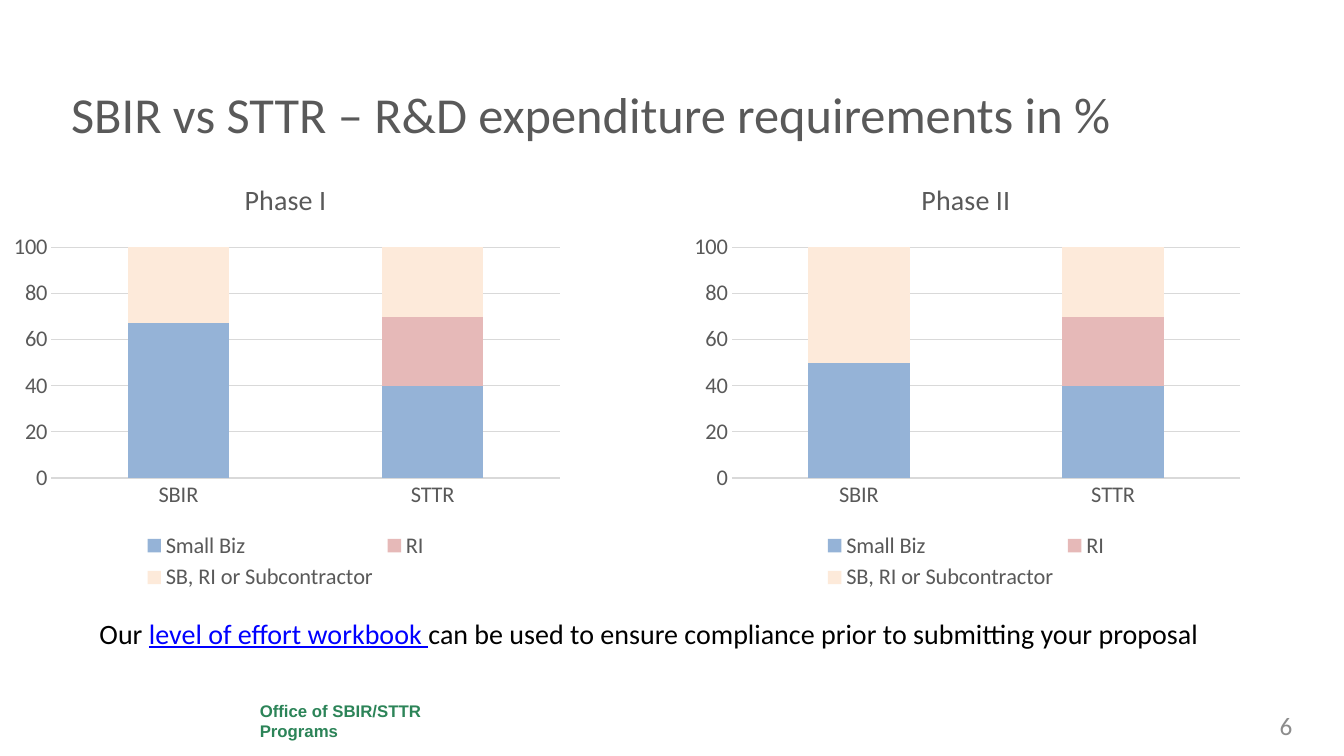
from dataclasses import dataclass

from lxml import etree
from pptx import Presentation
from pptx.chart.data import CategoryChartData
from pptx.dml.color import RGBColor
from pptx.enum.chart import XL_CHART_TYPE, XL_LEGEND_POSITION, XL_TICK_MARK
from pptx.enum.shapes import MSO_SHAPE
from pptx.enum.text import MSO_ANCHOR, PP_ALIGN
from pptx.oxml.ns import qn
from pptx.util import Pt

RECTANGLE = MSO_SHAPE.RECTANGLE
STACKED = XL_CHART_TYPE.COLUMN_STACKED
LEGEND_BOTTOM = XL_LEGEND_POSITION.BOTTOM
NO_TICK = XL_TICK_MARK.NONE
TOP, MIDDLE = MSO_ANCHOR.TOP, MSO_ANCHOR.MIDDLE
LEFT, CENTER = PP_ALIGN.LEFT, PP_ALIGN.CENTER


@dataclass(frozen=True)
class Theme:
    body_font: str = "Calibri"
    footer_font: str = "Arial"
    white: str = "FFFFFF"
    black: str = "000000"
    gray: str = "595959"
    light_gray: str = "8C8C8C"
    grid: str = "D9D9D9"
    green: str = "2C8458"
    link: str = "0000FF"
    series: tuple = ("95B3D7", "E6B9B8", "FDEADA")
    title_size: int = 36
    body_size: int = 20
    number_size: int = 18
    axis_size: int = 16
    footer_size: int = 12


class SlideBuilder:
    def __init__(self, page, theme):
        self.page = page
        self.theme = theme

    def style(self, font, size, color, name=None, bold=False):
        font.name = name or self.theme.body_font
        font.size = Pt(size)
        font.bold = bold
        font.color.rgb = RGBColor.from_string(color)

    def text(self, area, spans, size, anchor=TOP, align=LEFT, wrap=True):
        """Add one line of (wording, color, underlined) spans."""
        box = self.page.shapes.add_textbox(*map(Pt, area))
        frame = box.text_frame
        frame.word_wrap = wrap
        frame.vertical_anchor = anchor
        para = frame.paragraphs[0]
        para.alignment = align
        for wording, color, underlined in spans:
            span = para.add_run()
            span.text = wording
            self.style(span.font, size, color)
            span.font.underline = underlined

    def footer(self, area, wording):
        box = self.page.shapes.add_shape(RECTANGLE, *map(Pt, area))
        box.shadow.inherit = False
        box.fill.solid()
        box.fill.fore_color.rgb = RGBColor.from_string(self.theme.white)
        box.line.fill.background()
        box.text_frame.text = wording
        box.text_frame.vertical_anchor = MIDDLE
        para = box.text_frame.paragraphs[0]
        para.alignment = LEFT
        self.style(para.runs[0].font, self.theme.footer_size, self.theme.green,
                   self.theme.footer_font, bold=True)

    def stacked_chart(self, area, title, categories, series):
        theme = self.theme
        data = CategoryChartData()
        data.categories = categories
        for name, values in series.items():
            data.add_series(name, values)
        chart = self.page.shapes.add_chart(STACKED, *map(Pt, area), data).chart
        self.style(chart.font, theme.axis_size, theme.gray)

        # Title and legend
        chart.has_title = True
        chart.chart_title.include_in_layout = False
        chart.chart_title.text_frame.text = title
        heading = chart.chart_title.text_frame.paragraphs[0].runs[0]
        self.style(heading.font, theme.body_size, theme.gray)
        chart.has_legend = True
        chart.legend.position = LEGEND_BOTTOM
        chart.legend.include_in_layout = False
        self.style(chart.legend.font, theme.axis_size, theme.gray)

        # Columns
        plot = chart.plots[0]
        plot.vary_by_categories = False
        plot.gap_width, plot.overlap = 150, 100
        for column, color in zip(plot.series, theme.series):
            column.format.fill.solid()
            column.format.fill.fore_color.rgb = RGBColor.from_string(color)

        # Axes
        for axis in (chart.category_axis, chart.value_axis):
            axis.major_tick_mark = axis.minor_tick_mark = NO_TICK
            self.style(axis.tick_labels.font, theme.axis_size, theme.gray)
        scale = chart.value_axis
        scale.minimum_scale, scale.maximum_scale, scale.major_unit = 0, 100, 20
        scale.format.line.fill.background()
        scale.has_major_gridlines = True
        for line in (chart.category_axis.format.line, scale.major_gridlines.format.line):
            line.color.rgb = RGBColor.from_string(theme.grid)
            line.width = Pt(0.75)
        self.place_plot(chart, x=0.09, y=0.2, w=0.89, h=0.53)

    def place_plot(self, chart, **fractions):
        """Fix the inner plot area as fractions of the chart."""
        area = chart.plots[0]._element.getparent()
        for old in area.findall(qn("c:layout")):
            area.remove(old)
        layout = etree.Element(qn("c:layout"))
        area.insert(0, layout)
        manual = etree.SubElement(layout, qn("c:manualLayout"))
        settings = {"layoutTarget": "inner", "xMode": "edge", "yMode": "edge", **fractions}
        for tag, value in settings.items():
            etree.SubElement(manual, qn(f"c:{tag}"), val=str(value))


def main():
    theme = Theme()
    deck = Presentation()
    deck.slide_width, deck.slide_height = Pt(960), Pt(540)
    page = deck.slides.add_slide(deck.slide_layouts[6])
    builder = SlideBuilder(page, theme)

    # Footer and title
    builder.footer((178.5, 497.5, 152, 34.5), "Office of SBIR/STTR Programs")
    builder.text((0, 29, 844.5, 104.5),
                 [("SBIR vs STTR – R&D expenditure requirements in %", theme.gray, False)],
                 theme.title_size, MIDDLE, CENTER)

    # One chart per phase; only the SBIR small business share differs
    for left, title, share in ((0, "Phase I", 67), (486, "Phase II", 50)):
        builder.stacked_chart((left, 114.5, 408, 311), title, ("SBIR", "STTR"), {
            "Small Biz": (share, 40),
            "RI": (None, 30),
            "SB, RI or Subcontractor": (100 - share, 30),
        })

    # Workbook note and slide number
    builder.text((64, 436.5, 803, 55.5), [
        ("Our ", theme.black, False),
        ("level of effort workbook ", theme.link, True),
        ("can be used to ensure compliance prior to submitting your proposal",
         theme.black, False),
    ], theme.body_size, wrap=False)
    builder.text((907, 503.5, 53, 29), [("6", theme.light_gray, False)], theme.number_size)

    deck.save("out.pptx")


if __name__ == "__main__":
    main()
